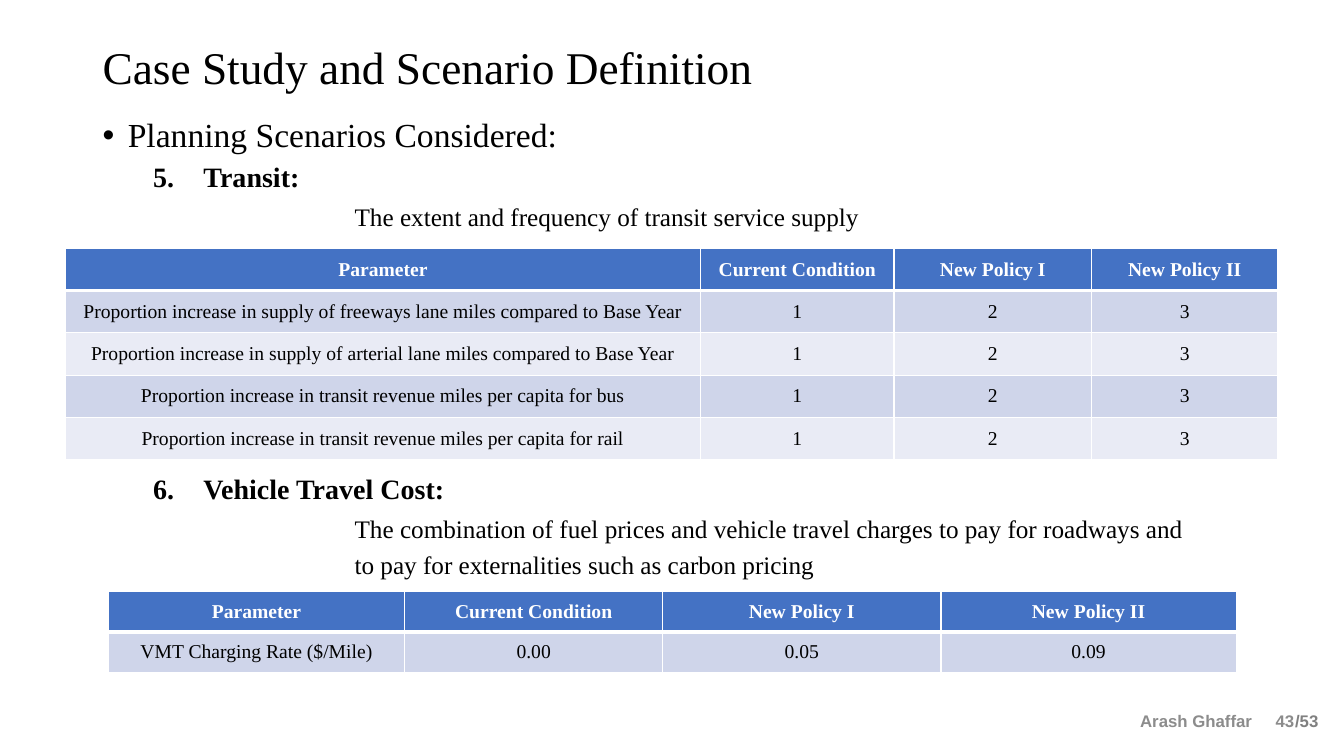
from lxml import etree
from pptx import Presentation
from pptx.dml.color import RGBColor
from pptx.enum import text
from pptx.oxml import ns
from pptx.util import Pt

BLACK = RGBColor(0x00, 0x00, 0x00)
WHITE = RGBColor(0xFF, 0xFF, 0xFF)
BLUE = RGBColor(0x44, 0x72, 0xC4)
BANDS = [RGBColor(0xCF, 0xD5, 0xEA), RGBColor(0xE9, 0xEB, 0xF5)]
PAGE_GREY = RGBColor(0x8C, 0x8C, 0x8C)
TOTAL_GREY = RGBColor(0x80, 0x80, 0x80)
LEFT = text.PP_ALIGN.LEFT
CENTER = text.PP_ALIGN.CENTER
RIGHT = text.PP_ALIGN.RIGHT
MIDDLE = text.MSO_ANCHOR.MIDDLE
TOP = text.MSO_ANCHOR.TOP


def write(paragraph, words, size=18, color=BLACK, bold=False, font="Times New Roman",
          align=LEFT, before=0, spacing=1.0, margin=0, hanging=0, bullet=None, number=None):
    paragraph.alignment = align
    paragraph.space_before = Pt(before)
    paragraph.line_spacing = spacing
    run = paragraph.add_run()
    run.text = words
    run.font.name = font
    run.font.size = Pt(size)
    run.font.bold = bold
    run.font.color.rgb = color
    properties = paragraph._p.get_or_add_pPr()
    properties.set("marL", str(Pt(margin)))
    properties.set("indent", str(-Pt(hanging)))
    if bullet:
        etree.SubElement(properties, ns.qn("a:buFont"), typeface="Arial")
        etree.SubElement(properties, ns.qn("a:buChar"), char=bullet)
    elif number:
        etree.SubElement(properties, ns.qn("a:buFont"), typeface="+mj-lt")
        etree.SubElement(properties, ns.qn("a:buAutoNum"), type="arabicPeriod", startAt=str(number))


class ScenarioSlide:
    def __init__(self, deck):
        self.slide = deck.slides.add_slide(deck.slide_layouts[6])

    def text_box(self, left, top, width, height, paragraphs, anchor=TOP, wrap=True):
        box = self.slide.shapes.add_textbox(Pt(left), Pt(top), Pt(width), Pt(height))
        frame = box.text_frame
        frame.word_wrap = wrap
        frame.vertical_anchor = anchor
        for index, (words, style) in enumerate(paragraphs):
            paragraph = frame.add_paragraph() if index else frame.paragraphs[0]
            write(paragraph, words, **style)

    def border(self, cell, position, side, width):
        line = etree.Element(ns.qn(f"a:ln{side}"), w=str(Pt(width)))
        fill = etree.SubElement(line, ns.qn("a:solidFill"))
        etree.SubElement(fill, ns.qn("a:srgbClr"), val=str(WHITE))
        cell._tc.get_or_add_tcPr().insert(position, line)

    def policy_table(self, left, top, widths, row_height, rows):
        content = [("Parameter", "Current Condition", "New Policy I", "New Policy II"), *rows]
        table = self.slide.shapes.add_table(
            len(content), len(widths), Pt(left), Pt(top),
            Pt(sum(widths)), Pt(row_height * len(content))).table
        for column, width in zip(table.columns, widths):
            column.width = Pt(width)
        for r, values in enumerate(content):
            table.rows[r].height = Pt(row_height)
            header = r == 0
            for c, value in enumerate(values):
                cell = table.cell(r, c)
                cell.vertical_anchor = MIDDLE
                cell.fill.solid()
                cell.fill.fore_color.rgb = BLUE if header else BANDS[(r - 1) % 2]
                write(cell.text_frame.paragraphs[0], value, size=14, bold=header,
                      color=WHITE if header else BLACK, align=CENTER)
                borders = {"L": 1, "R": 1, "T": 3 if r == 1 else 1, "B": 3 if header else 1}
                for position, (side, width) in enumerate(borders.items()):
                    self.border(cell, position, side, width)


def main():
    deck = Presentation()
    deck.slide_width, deck.slide_height = Pt(960), Pt(540)
    page = ScenarioSlide(deck)

    scenario = dict(size=20, bold=True, spacing=0.9, margin=72, hanging=36)
    detail = dict(spacing=0.9, margin=180)
    page.text_box(66.24, 28.8, 828, 41.76, [
        ("Case Study and Scenario Definition", dict(size=32.4, spacing=0.9)),
    ], anchor=MIDDLE)
    page.text_box(66.24, 81.4, 828, 90, [
        ("Planning Scenarios Considered:",
         dict(size=24, spacing=0.9, margin=18, hanging=18, bullet="•")),
        ("Transit:", dict(scenario, number=5, before=6)),
        ("The extent and frequency of transit service supply", dict(detail, before=8)),
    ])
    page.text_box(66.24, 336, 828, 82, [
        ("Vehicle Travel Cost:", dict(scenario, number=6)),
        ("The combination of fuel prices and vehicle travel charges to pay for roadways and",
         dict(detail, before=8)),
        ("to pay for externalities such as carbon pricing", dict(detail, before=6)),
    ])

    supply = [
        "Proportion increase in supply of freeways lane miles compared to Base Year",
        "Proportion increase in supply of arterial lane miles compared to Base Year",
        "Proportion increase in transit revenue miles per capita for bus",
        "Proportion increase in transit revenue miles per capita for rail",
    ]
    page.policy_table(46.8, 177.3, [453.6, 138.24, 141.12, 133.2], 30.24,
                      [(parameter, "1", "2", "3") for parameter in supply])
    page.policy_table(77.4, 422.64, [211.68, 184.32, 198.72, 210.96], 28.8,
                      [("VMT Charging Rate ($/Mile)", "0.00", "0.05", "0.09")])

    footer = dict(size=12, bold=True, font="Arial")
    for words, left, width, color, align in [
        ("Arash Ghaffar", 715.68, 185.8, PAGE_GREY, RIGHT),
        ("43", 901.68, 30, PAGE_GREY, RIGHT),
        ("/53", 918, 31.68, TOTAL_GREY, LEFT),
    ]:
        page.text_box(left, 500.4, width, 28.8,
                      [(words, dict(footer, color=color, align=align))],
                      anchor=MIDDLE, wrap=False)

    deck.save("out.pptx")


if __name__ == "__main__":
    main()
